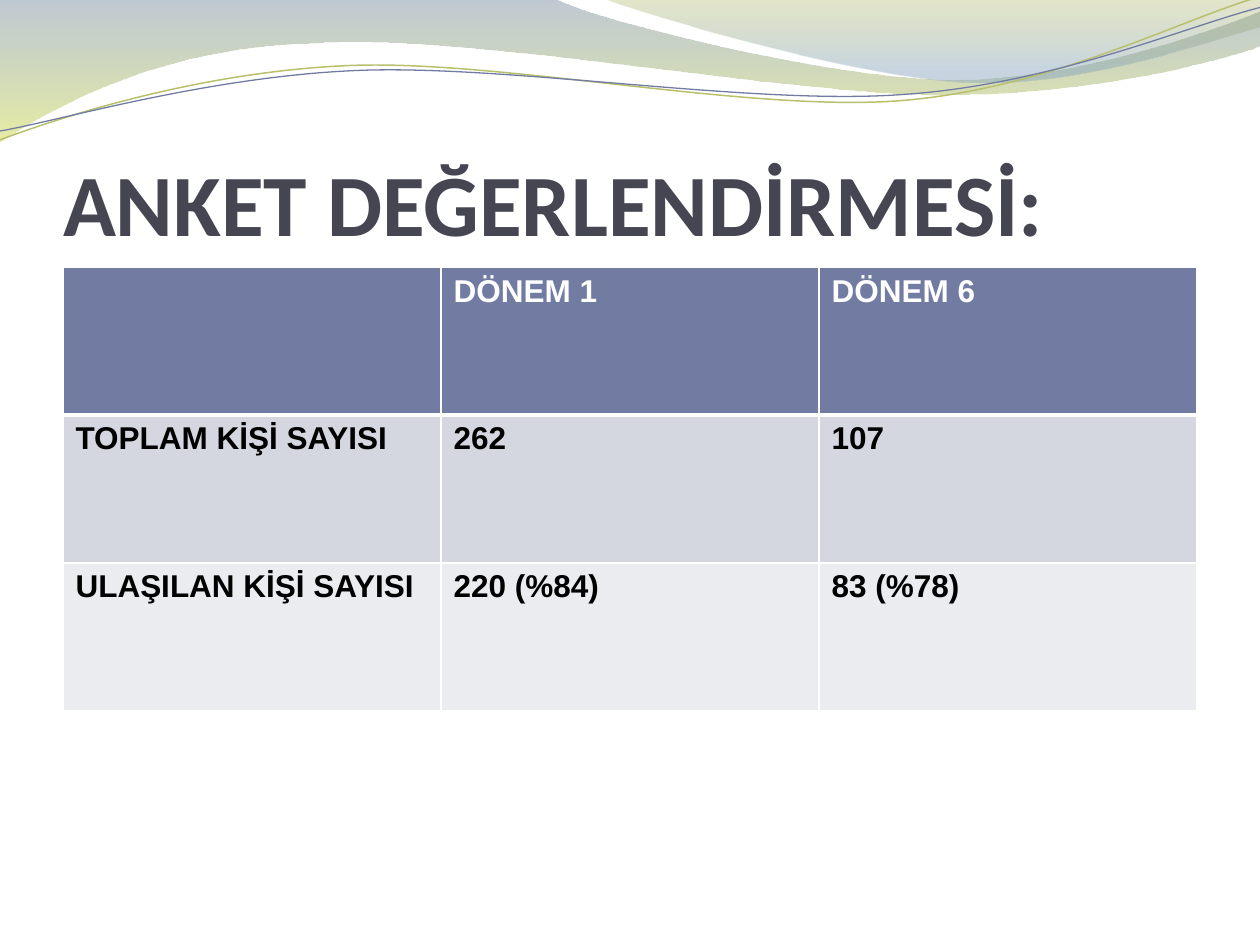
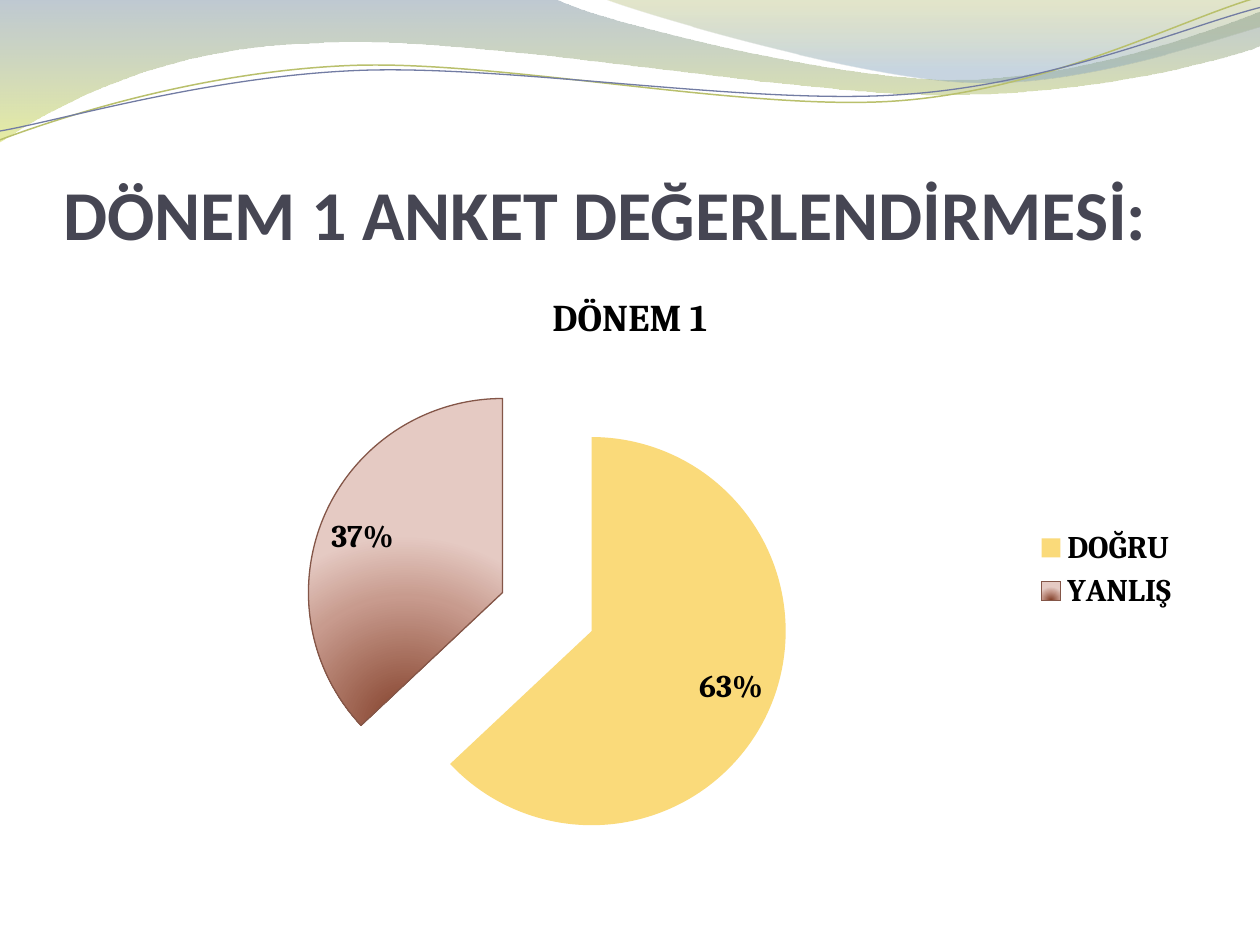
import math

from lxml import etree
from pptx import Presentation
from pptx import util as u
from pptx.chart.data import CategoryChartData
from pptx.dml.color import RGBColor
from pptx.enum import chart as ch, text
from pptx.oxml import parse_xml
from pptx.oxml.ns import nsdecls, qn

C = {
    "white": "FFFFFF", "black": "000000", "title": "464653",
    "slate": "727CA3", "band1": "D5D7E0", "band2": "EBECF0",
    "mist": "72889B", "lime": "D3DE57", "olive": "A4AC50", "sky": "84A3BD",
    "moss": "B9C06C", "yellow": "FADA7A",
    "brown": "813D26", "clay": "C89B8E", "rose": "E5CAC3", "umber": "845648",
}
TITLE_BOX = (0.5, 0.77, 9, 1.25)
TABLE_BOX = (0.5, 2.12, 9, 3.52)
CHART_BOX = (0.5, 2.12, 9, 4.8)
TILT = -2.7

BANDS = [
    ([(0, 0), (4.4, -0.01),
      (4.76, 0.17, 6.64, 0.63, 7.58, 0.63), (8.53, 0.63, 9.58, 0.26, 10, 0.09),
      (10.01, 0.36),
      (9.83, 0.44, 8.7, 0.76, 7.46, 0.75), (6.22, 0.75, 3.82, 0.28, 2.57, 0.34),
      (1.29, 0.36, 0.46, 0.83, -0.01, 1.13), (0, 0)],
     [(0, "mist", 45), (1, "lime", 55)]),
    ([(4.79, -0.01),
      (5.09, 0.11, 6.82, 0.62, 7.69, 0.65), (8.56, 0.69, 9.61, 0.32, 10, 0.21),
      (10, 0), (4.79, -0.01)],
     [(0, "olive", 30), (0.8, "sky", 45)]),
]
STRANDS = [
    ([(0, 1.11), (0.48, 0.93, 1.58, 0.57, 2.77, 0.52),
      (3.95, 0.47, 5.93, 0.89, 7.13, 0.8), (8.33, 0.71, 9.38, 0.15, 9.98, -0.02)],
     (4.99, 0.58), "moss", 0.85),
    ([(0, 1.04), (0.47, 0.96, 1.64, 0.61, 2.83, 0.56),
      (4.03, 0.51, 5.97, 0.84, 7.17, 0.75), (8.36, 0.67, 9.41, 0.21, 10, 0.06)],
     (5, 0.59), "slate", 0.75),
]


def rgb(name):
    """Return the palette colour as an RGBColor."""
    return RGBColor.from_string(C[name])


def inches(box):
    """Convert a box of numbers to lengths."""
    return [u.Inches(v) for v in box]


def style_font(font, name, size, color):
    """Give a font its bold face, size and colour."""
    font.name, font.size, font.bold = name, u.Pt(size), True
    font.color.rgb = rgb(color)


def turn(seg, pivot, degrees):
    """Rotate every point of a path segment clockwise about a pivot."""
    cos, sin = math.cos(math.radians(degrees)), math.sin(math.radians(degrees))
    out = []
    for x, y in zip(seg[::2], seg[1::2]):
        dx, dy = x - pivot[0], y - pivot[1]
        out += [pivot[0] + dx * cos - dy * sin, pivot[1] + dx * sin + dy * cos]
    return out


def add_outline(s, path, close):
    """Draw corners and cubic curves as a freeform without a shadow."""
    pts = [tuple(inches(seg[i:i + 2])) for seg in path for i in range(0, len(seg), 2)]
    fb = s.shapes.build_freeform(*pts[0])
    fb.add_line_segments(pts[1:], close=close)
    sp = fb.convert_to_shape()
    sp.shadow.inherit = False
    lines = iter(list(sp.element.iter(qn("a:lnTo"))))
    for seg in path[1:]:
        first = next(lines)
        if len(seg) == 6:
            curve = etree.Element(qn("a:cubicBezTo"))
            first.addprevious(curve)
            for line in (first, next(lines), next(lines)):
                curve.append(line[0])
                line.getparent().remove(line)
    return sp


def fill_band(sp, stops):
    """Fill a band with a translucent gradient running downwards."""
    sp.line.fill.background()
    sp.fill.gradient()
    sp.fill.gradient_angle = 270
    for stop, (pos, color, _) in zip(sp.fill.gradient_stops, stops):
        stop.position = pos
        stop.color.rgb = rgb(color)
    for clr, (_, _, opacity) in zip(sp.element.iter(qn("a:srgbClr")), stops):
        etree.SubElement(clr, qn("a:alpha")).set("val", str(opacity * 1000))


def add_waves(s):
    """Build the wave header and hand it to the slide master."""
    waves = []
    for path, stops in BANDS:
        sp = add_outline(s, path, True)
        fill_band(sp, stops)
        waves.append(sp)
    for path, pivot, color, width in STRANDS:
        sp = add_outline(s, [turn(seg, pivot, -TILT) for seg in path], False)
        sp.rotation = TILT
        sp.fill.background()
        sp.line.color.rgb = rgb(color)
        sp.line.width = u.Pt(width)
        waves.append(sp)
    tree = s.slide_layout.slide_master.shapes.element
    for i, sp in enumerate(waves):
        tree.insert(2 + i, sp.element)


def add_title(s, box, words, size):
    """Place and format the title placeholder."""
    sp = s.shapes.title
    sp.left, sp.top, sp.width, sp.height = inches(box)
    tf = sp.text_frame
    tf.word_wrap = True
    tf.auto_size = text.MSO_AUTO_SIZE.NONE
    tf.vertical_anchor = text.MSO_ANCHOR.BOTTOM
    tf.margin_left = tf.margin_right = tf.margin_bottom = 0
    tf.margin_top = u.Inches(0.05)
    p = tf.paragraphs[0]
    p.alignment = text.PP_ALIGN.LEFT
    r = p.add_run()
    r.text = words
    style_font(r.font, "Calibri", size, "title")


def set_borders(cell, bottom):
    """Draw white cell borders with the given bottom width."""
    pr = cell._tc.get_or_add_tcPr()
    for i, (side, width) in enumerate(zip("LRTB", (1, 1, 1, bottom))):
        pr.insert(i, parse_xml(
            f'<a:ln{side} {nsdecls("a")} w="{u.Pt(width)}"><a:solidFill>'
            f'<a:srgbClr val="{C["white"]}"/></a:solidFill></a:ln{side}>'))


def add_survey_table(s, box, rows):
    """Fill the box with a table of equal rows and columns."""
    table = s.shapes.add_table(len(rows), len(rows[0]), *inches(box)).table
    for i, row in enumerate(rows):
        for j, words in enumerate(row):
            cell = table.cell(i, j)
            cell.fill.solid()
            cell.fill.fore_color.rgb = rgb(("slate", "band1", "band2")[i])
            set_borders(cell, 1 if i else 3)
            if words:
                r = cell.text_frame.paragraphs[0].add_run()
                r.text = words
                style_font(r.font, "Arial", 18, "black" if i else "white")


def shade_wrong(pt):
    """Give the slice a radial gradient and a thin outline."""
    pt.format.line.color.rgb = rgb("umber")
    pt.format.line.width = u.Pt(0.75)
    pt.format.fill.gradient()
    stops = "".join(
        f'<a:gs pos="{pos * 1000}"><a:srgbClr val="{C[color]}"/></a:gs>'
        for pos, color in ((0, "brown"), (68, "clay"), (100, "rose")))
    grad = parse_xml(
        f'<a:gradFill {nsdecls("a")} rotWithShape="1"><a:gsLst>{stops}</a:gsLst>'
        '<a:path path="circle"><a:fillToRect l="50000" t="130000" r="50000" '
        'b="-30000"/></a:path></a:gradFill>')
    old = next(pt._ser.iter(qn("a:gradFill")))
    old.getparent().replace(old, grad)


def add_answer_pie(s, box, name, answers):
    """Fill the box with an exploded pie of the answers."""
    data = CategoryChartData(number_format="0%")
    data.categories = list(answers)
    data.add_series(name, list(answers.values()))
    chart = s.shapes.add_chart(ch.XL_CHART_TYPE.PIE, *inches(box), data).chart
    style_font(chart.font, "Cambria", 18, "black")

    chart.has_title = True
    r = chart.chart_title.text_frame.paragraphs[0].add_run()
    r.text = name
    style_font(r.font, "Cambria", 21.6, "black")
    chart.has_legend = True
    chart.legend.position = ch.XL_LEGEND_POSITION.RIGHT
    chart.legend.include_in_layout = False
    style_font(chart.legend.font, "Cambria", 18, "black")

    plot = chart.plots[0]
    plot.vary_by_categories = True
    ser = plot.series[0]
    ser._element.find(qn("c:tx")).addnext(
        parse_xml(f'<c:explosion {nsdecls("c")} val="25"/>'))
    right, wrong = ser.points[0], ser.points[1]
    right.format.fill.solid()
    right.format.fill.fore_color.rgb = rgb("yellow")
    right.format.line.fill.background()
    shade_wrong(wrong)

    labels = ser.data_labels
    labels.show_value = True
    labels.number_format, labels.number_format_is_linked = "0%", False
    labels.position = ch.XL_LABEL_POSITION.INSIDE_END
    style_font(labels.font, "Cambria", 18, "black")


def main():
    """Build both slides and save them."""
    prs = Presentation()
    prs.slide_width, prs.slide_height = inches((10, 7.5))
    layout = prs.slide_layouts[5]

    s = prs.slides.add_slide(layout)
    add_waves(s)
    add_title(s, TITLE_BOX, "ANKET DEĞERLENDİRMESİ:", 50)
    add_survey_table(s, TABLE_BOX, [
        ("", "DÖNEM 1", "DÖNEM 6"),
        ("TOPLAM KİŞİ SAYISI", "262", "107"),
        ("ULAŞILAN KİŞİ SAYISI", "220 (%84)", "83 (%78)"),
    ])

    s = prs.slides.add_slide(layout)
    add_title(s, TITLE_BOX, "DÖNEM 1 ANKET DEĞERLENDİRMESİ:", 40)
    add_answer_pie(s, CHART_BOX, "DÖNEM 1", {"DOĞRU ": 0.63, "YANLIŞ": 0.37})

    prs.save("out.pptx")


if __name__ == "__main__":
    main()
